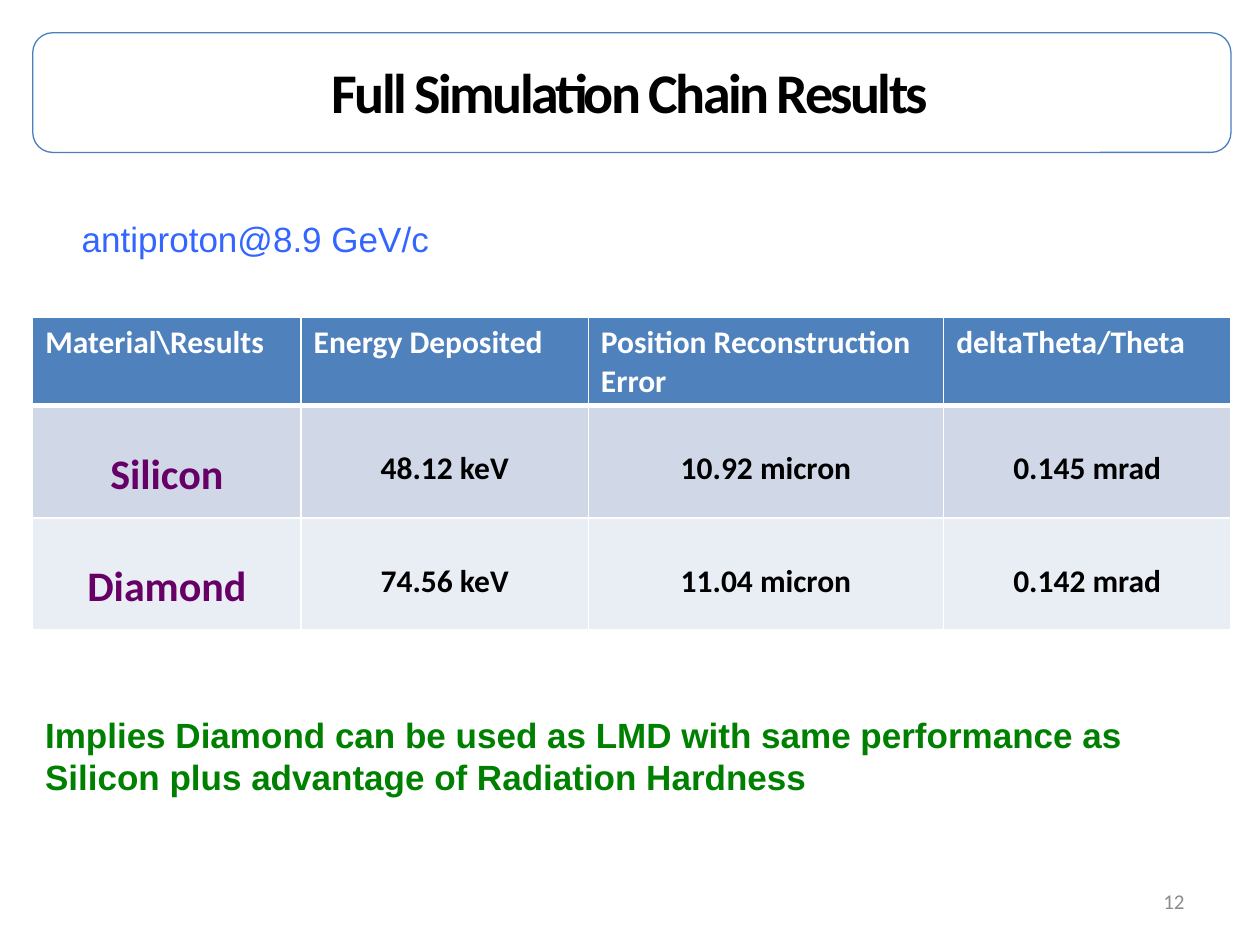
from lxml import etree
from pptx import Presentation
from pptx.dml.color import RGBColor
from pptx.enum import shapes, text
from pptx.oxml import ns
from pptx.util import Inches, Pt

COLORS = {
    "black": "000000", "white": "FFFFFF", "gray": "8C8C8C",
    "outline": "4B7EBC", "header": "4F81BD",
    "band_dark": "D0D8E8", "band_light": "E9EDF4",
    "beam": "3366FF", "material": "660066", "conclusion": "008000",
}
LEFT, WIDTH = 0.26, 9.51
COLUMN_WIDTHS = [2.13, 2.28, 2.82, 2.28]
ROW_HEIGHTS = [0.69, 0.89, 0.89]
HEADINGS = ["Material\\Results", "Energy Deposited",
            "Position Reconstruction\nError", "deltaTheta/Theta"]
RESULTS = [
    ["Silicon", "48.12 keV", "10.92 micron", "0.145 mrad"],
    ["Diamond", "74.56 keV", "11.04 micron", "0.142 mrad"],
]


def color(name):
    """Return the named colour."""
    return RGBColor.from_string(COLORS[name])


def write_text(frame, content, *, size=18, font="Calibri", fill="black",
               bold=False, align=text.PP_ALIGN.LEFT, spacing=None):
    """Write one paragraph per line of content in a single format."""
    for index, line in enumerate(content.split("\n")):
        paragraph = frame.add_paragraph() if index else frame.paragraphs[0]
        paragraph.alignment = align
        run = paragraph.add_run()
        run.text = line
        run.font.size = Pt(size)
        run.font.name = font
        run.font.bold = bold
        run.font.color.rgb = color(fill)
        if spacing is not None:
            run.font._element.set("spc", str(round(spacing * 100)))


def place(shape, left, top, width, height):
    """Set the position and size of a shape in inches."""
    shape.left, shape.top = Inches(left), Inches(top)
    shape.width, shape.height = Inches(width), Inches(height)


def add_title(slide, content):
    """Fill the title placeholder and frame it with a rounded outline."""
    title = slide.shapes.title
    place(title, 0, 0.41, 10, 0.64)
    title.text_frame.auto_size = text.MSO_AUTO_SIZE.NONE
    title.text_frame.vertical_anchor = text.MSO_ANCHOR.TOP
    write_text(title.text_frame, content, size=32, bold=True,
               align=text.PP_ALIGN.CENTER, spacing=-1.5)
    outline = slide.shapes.add_shape(
        shapes.MSO_SHAPE.ROUNDED_RECTANGLE,
        Inches(LEFT), Inches(0.26), Inches(WIDTH), Inches(0.95))
    outline.shadow.inherit = False
    outline.fill.background()
    outline.line.color.rgb = color("outline")
    outline.line.width = Pt(0.75)


def add_text_box(slide, box, content, wrap=True,
                 anchor=text.MSO_ANCHOR.TOP, **style):
    """Add a text box with formatted text."""
    frame = slide.shapes.add_textbox(*map(Inches, box)).text_frame
    frame.word_wrap = wrap
    frame.vertical_anchor = anchor
    write_text(frame, content, **style)


def set_borders(cell, **widths):
    """Draw white cell borders of the given widths in points."""
    properties = cell._tc.get_or_add_tcPr()
    for index, (side, width) in enumerate(widths.items()):
        line = etree.Element(ns.qn(f"a:ln{side}"), w=str(Pt(width)))
        solid = etree.SubElement(line, ns.qn("a:solidFill"))
        etree.SubElement(solid, ns.qn("a:srgbClr"), val=COLORS["white"])
        properties.insert(index, line)


def fill_cell(cell, content, background, top_border=1, bottom_border=1, **style):
    """Write a table cell with its fill and borders."""
    cell.fill.solid()
    cell.fill.fore_color.rgb = color(background)
    set_borders(cell, L=1, R=1, T=top_border, B=bottom_border)
    write_text(cell.text_frame, content, bold=True, **style)


def add_results_table(slide):
    """Add the table that compares the two materials."""
    table = slide.shapes.add_table(
        len(ROW_HEIGHTS), len(COLUMN_WIDTHS), Inches(LEFT), Inches(2.52),
        Inches(WIDTH), Inches(sum(ROW_HEIGHTS))).table
    for column, width in zip(table.columns, COLUMN_WIDTHS):
        column.width = Inches(width)
    for row, height in zip(table.rows, ROW_HEIGHTS):
        row.height = Inches(height)
    for column, heading in enumerate(HEADINGS):
        fill_cell(table.cell(0, column), heading, "header",
                  bottom_border=3, fill="white")
    for row, values in enumerate(RESULTS, 1):
        background = "band_dark" if row % 2 else "band_light"
        for column, value in enumerate(values):
            cell = table.cell(row, column)
            cell.margin_top = Inches(0.35)
            style = {} if column else {"size": 24, "fill": "material"}
            fill_cell(cell, value, background, top_border=3 if row == 1 else 1,
                      align=text.PP_ALIGN.CENTER, **style)


def main():
    """Build and save the presentation."""
    presentation = Presentation()
    presentation.slide_width, presentation.slide_height = Inches(10), Inches(7.5)
    slide = presentation.slides.add_slide(presentation.slide_layouts[5])
    add_title(slide, "Full Simulation Chain Results")
    add_text_box(slide, (0.55, 1.68, 2.98, 0.44), "antiproton@8.9 GeV/c",
                 wrap=False, size=20, font="Arial", fill="beam")
    add_results_table(slide)
    add_text_box(slide, (LEFT, 5.61, 9.5, 0.77),
                 "Implies Diamond can be used as LMD with same performance as "
                 "Silicon plus advantage of Radiation Hardness",
                 size=20, font="Arial", fill="conclusion", bold=True)
    add_text_box(slide, (7.17, 6.95, 2.33, 0.4), "12",
                 anchor=text.MSO_ANCHOR.MIDDLE, size=12, fill="gray",
                 align=text.PP_ALIGN.RIGHT)
    presentation.save("out.pptx")


if __name__ == "__main__":
    main()
